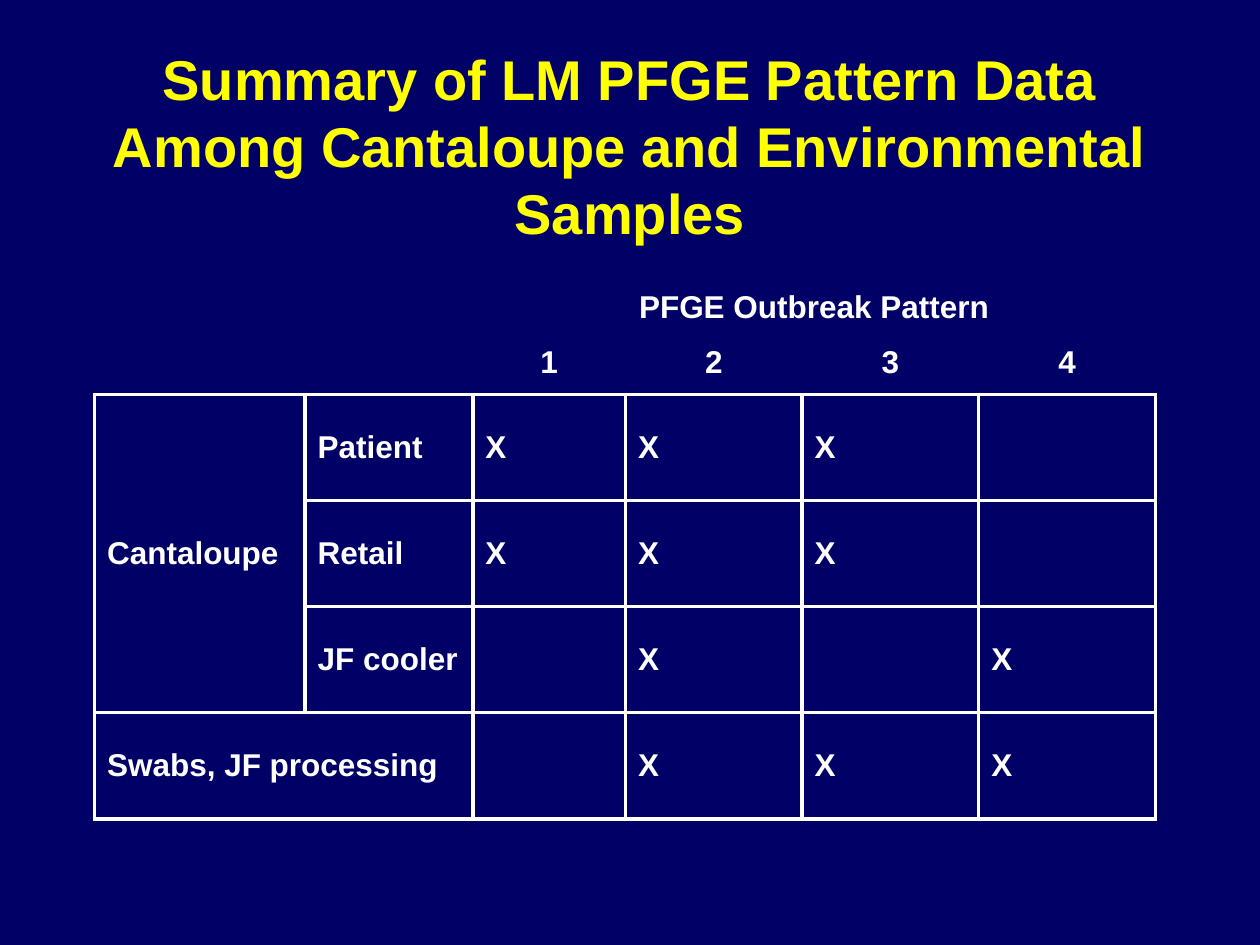
from lxml import etree
from pptx import Presentation
from pptx import util as u
from pptx.dml.color import RGBColor
from pptx.enum import text
from pptx.oxml import ns

COLORS = {"background": "000066", "title": "FFFF00", "text": "FFFFFF", "border": "FFFFFF"}
FONT = {"name": "Arial", "bold": True}
BORDER_WIDTH = u.Pt(2.25)

COLUMN_WIDTHS = [1.67, 1.33, 1.21, 1.4, 1.4, 1.4]
ROW_HEIGHTS = [0.44] * 2 + [0.84] * 4
HEADER_ROWS = 2
ROWS = [
    ["", "", "PFGE Outbreak Pattern", "", "", ""],
    ["", "", "1", "2", "3", "4"],
    ["Cantaloupe", "Patient", "X", "X", "X", ""],
    ["", "Retail", "X", "X", "X", ""],
    ["", "JF cooler", "", "X", "", "X"],
    ["Swabs, JF processing", "", "", "X", "X", "X"],
]
# First and last cell of each merged block, as (row, column)
MERGES = [((0, 0), (1, 1)), ((0, 2), (0, 5)), ((2, 0), (4, 0)), ((5, 0), (5, 1))]


def set_format(target, values):
    for name, value in values.items():
        setattr(target, name, value)


def format_font(font, size, color):
    set_format(font, {**FONT, "size": u.Pt(size)})
    font.color.rgb = RGBColor.from_string(COLORS[color])


def set_borders(cell, visible_sides):
    """Draw the given sides (letters of LRTB) and hide the others."""
    properties = cell._tc.get_or_add_tcPr()
    for index, side in enumerate("LRTB"):
        line = etree.Element(ns.qn(f"a:ln{side}"), w=str(BORDER_WIDTH))
        if side in visible_sides:
            fill = etree.SubElement(line, ns.qn("a:solidFill"))
            etree.SubElement(fill, ns.qn("a:srgbClr"), val=COLORS["border"])
        else:
            etree.SubElement(line, ns.qn("a:noFill"))
        properties.insert(index, line)


def add_title(slide, left, top, width, height):
    title = slide.shapes.title
    set_format(title, {"left": left, "top": top, "width": width, "height": height})
    frame = title.text_frame
    frame.text = "Summary of LM PFGE Pattern Data Among Cantaloupe and Environmental Samples"
    set_format(frame, {
        "word_wrap": True,
        "auto_size": text.MSO_AUTO_SIZE.NONE,
        "vertical_anchor": text.MSO_ANCHOR.BOTTOM,
    })
    paragraph = frame.paragraphs[0]
    paragraph.alignment = text.PP_ALIGN.CENTER
    format_font(paragraph.runs[0].font, 32, "title")


def fill_cell(cell, wording, is_header):
    cell.fill.background()
    cell.vertical_anchor = text.MSO_ANCHOR.TOP if is_header else text.MSO_ANCHOR.MIDDLE
    paragraph = cell.text_frame.paragraphs[0]
    paragraph.alignment = text.PP_ALIGN.CENTER if is_header else text.PP_ALIGN.LEFT
    format_font(paragraph.font, 18, "text")
    if wording:
        run = paragraph.add_run()
        run.text = wording
        format_font(run.font, 18, "text")


def add_pattern_table(slide, left, top, width, height):
    table = slide.shapes.add_table(
        len(ROWS), len(COLUMN_WIDTHS), left, top, width, height).table
    set_format(table, {"first_row": False, "horz_banding": False})
    for column, share in zip(table.columns, COLUMN_WIDTHS):
        column.width = int(width * share / sum(COLUMN_WIDTHS))
    for row, share in zip(table.rows, ROW_HEIGHTS):
        row.height = int(height * share / sum(ROW_HEIGHTS))
    for first, last in MERGES:
        table.cell(*first).merge(table.cell(*last))
    for row, wordings in enumerate(ROWS):
        for column, wording in enumerate(wordings):
            cell = table.cell(row, column)
            is_header = row < HEADER_ROWS
            fill_cell(cell, wording, is_header)
            meets_body = row == HEADER_ROWS - 1 or (row, column) == (0, 0)
            set_borders(cell, "LRTB" if not is_header else "B" if meets_body else "")


def main():
    presentation = Presentation()
    set_format(presentation, {"slide_width": u.Inches(10), "slide_height": u.Inches(7.5)})
    slide = presentation.slides.add_slide(presentation.slide_layouts.get_by_name("Title Only"))
    slide.background.fill.solid()
    slide.background.fill.fore_color.rgb = RGBColor.from_string(COLORS["background"])
    add_title(slide, u.Inches(0.5), u.Inches(0.75), u.Inches(9), u.Inches(1.25))
    add_pattern_table(slide, u.Inches(0.75), u.Inches(2.25), u.Inches(8.42), u.Inches(4.25))
    presentation.save("out.pptx")


if __name__ == "__main__":
    main()
